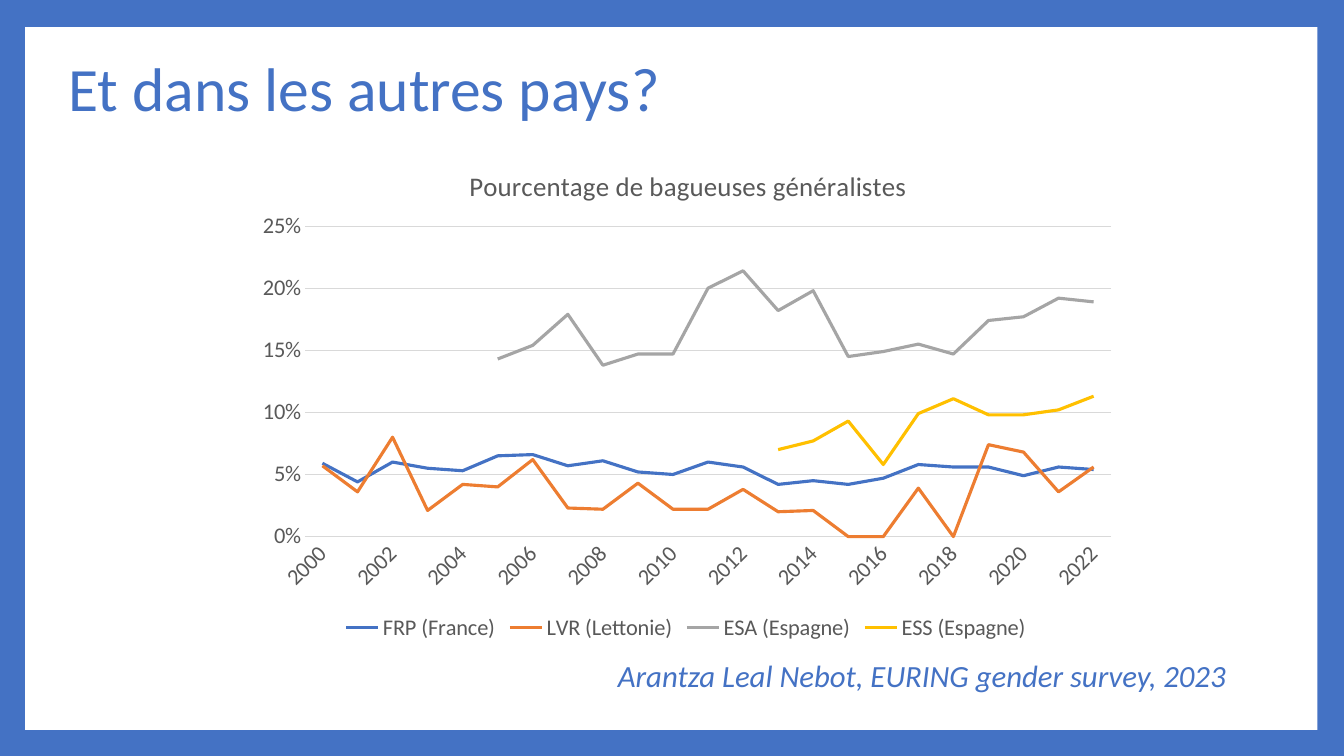
"""Build the slide comparing the share of women ringers across countries."""
from dataclasses import dataclass

import lxml.etree
import pptx
import pptx.chart.data
import pptx.dml.color
import pptx.enum.chart
import pptx.enum.shapes
import pptx.enum.text
import pptx.oxml
import pptx.oxml.ns
import pptx.util

Pt = pptx.util.Pt
qn = pptx.oxml.ns.qn


@dataclass(frozen=True)
class Theme:
    font: str = "Calibri"
    blue: str = "4472C4"
    white: str = "FFFFFF"
    label: str = "595959"
    grid: str = "D9D9D9"
    heading_size: float = 44
    credit_size: float = 22
    chart_title_size: float = 19.2
    label_size: float = 16
    series_width: float = 2.25
    grid_width: float = 0.75


THEME = Theme()
YEARS = range(2000, 2023)
COUNTRIES = [
    ("FRP (France)", "4472C4", 2000,
     [0.059, 0.044, 0.06, 0.055, 0.053, 0.065, 0.066, 0.057, 0.061, 0.052, 0.05, 0.06,
      0.056, 0.042, 0.045, 0.042, 0.047, 0.058, 0.056, 0.056, 0.049, 0.056, 0.054]),
    ("LVR (Lettonie)", "ED7D31", 2000,
     [0.057, 0.036, 0.08, 0.021, 0.042, 0.04, 0.062, 0.023, 0.022, 0.043, 0.022, 0.022,
      0.038, 0.02, 0.021, 0, 0, 0.039, 0, 0.074, 0.068, 0.036, 0.056]),
    ("ESA (Espagne)", "A5A5A5", 2005,
     [0.143, 0.154, 0.179, 0.138, 0.147, 0.147, 0.2, 0.214, 0.182, 0.198, 0.145, 0.149,
      0.155, 0.147, 0.174, 0.177, 0.192, 0.189]),
    ("ESS (Espagne)", "FFC000", 2013,
     [0.07, 0.077, 0.093, 0.058, 0.099, 0.111, 0.098, 0.098, 0.102, 0.113]),
]


def rgb(code):
    return pptx.dml.color.RGBColor.from_string(code)


def style_font(font, size, color, italic=False):
    font.name = THEME.font
    font.size = Pt(size)
    font.color.rgb = rgb(color)
    font.bold = False
    font.italic = italic


def style_line(line, color, width):
    line.color.rgb = rgb(color)
    line.width = Pt(width)


def add_text(slide, text, *, box, size, color, italic=False,
             anchor=pptx.enum.text.MSO_ANCHOR.TOP, inset=7.2):
    frame = slide.shapes.add_textbox(*map(Pt, box)).text_frame
    frame.word_wrap = True
    frame.vertical_anchor = anchor
    frame.margin_left = Pt(inset)
    paragraph = frame.paragraphs[0]
    paragraph.line_spacing = 0.9
    run = paragraph.add_run()
    run.text = text
    style_font(run.font, size, color, italic)


def add_panel(slide, box):
    panel = slide.shapes.add_shape(pptx.enum.shapes.MSO_SHAPE.RECTANGLE, *map(Pt, box))
    panel.shadow.inherit = False
    panel.fill.solid()
    panel.fill.fore_color.rgb = rgb(THEME.white)
    panel.line.fill.background()


def set_layout(parent, index, **settings):
    for previous in parent.findall(qn("c:layout")):
        parent.remove(previous)
    layout = lxml.etree.Element(qn("c:layout"))
    manual = lxml.etree.SubElement(layout, qn("c:manualLayout"))
    for tag, value in settings.items():
        lxml.etree.SubElement(manual, qn(f"c:{tag}")).set("val", str(value))
    parent.insert(index, layout)


def style_axes(chart):
    tick_none = pptx.enum.chart.XL_TICK_MARK.NONE
    years, share = chart.category_axis, chart.value_axis
    for axis in (years, share):
        axis.major_tick_mark = axis.minor_tick_mark = tick_none
        style_font(axis.tick_labels.font, THEME.label_size, THEME.label)
    style_line(years.format.line, THEME.grid, THEME.grid_width)
    years_xml = years._element
    years_xml.find(qn("c:txPr")).find(qn("a:bodyPr")).set("rot", "-2700000")
    skip = lxml.etree.Element(qn("c:tickLblSkip"))
    skip.set("val", "2")
    years_xml.find(qn("c:noMultiLvlLbl")).addprevious(skip)

    share.minimum_scale, share.maximum_scale, share.major_unit = 0, 0.25, 0.05
    share.tick_labels.number_format = "0%"
    share.tick_labels.number_format_is_linked = False
    share.format.line.fill.background()
    style_line(share.major_gridlines.format.line, THEME.grid, THEME.grid_width)


def add_share_chart(slide, title, box):
    shares = pptx.chart.data.CategoryChartData(number_format="0%")
    shares.categories = [str(year) for year in YEARS]
    for name, _, first_year, values in COUNTRIES:
        shares.add_series(name, [None] * (first_year - YEARS[0]) + values)
    chart = slide.shapes.add_chart(
        pptx.enum.chart.XL_CHART_TYPE.LINE, *map(Pt, box), shares).chart
    style_font(chart.font, THEME.label_size, THEME.label)

    chart.has_title = True
    heading = chart.chart_title.text_frame
    heading.text = title
    style_font(heading.paragraphs[0].runs[0].font, THEME.chart_title_size, THEME.label)
    set_layout(chart.chart_title._element, 1, xMode="edge", yMode="edge", x=0.25, y=0.05)
    set_layout(chart._chartSpace.chart.plotArea, 0, layoutTarget="inner",
               xMode="edge", yMode="edge", x=0.07, y=0.175, w=0.91, h=0.61)

    style_axes(chart)
    chart.has_legend = True
    chart.legend.position = pptx.enum.chart.XL_LEGEND_POSITION.BOTTOM
    chart.legend.include_in_layout = False
    style_font(chart.legend.font, THEME.label_size, THEME.label)
    for series, (_, color, _, _) in zip(chart.plots[0].series, COUNTRIES):
        series.smooth = False
        series.marker.style = pptx.enum.chart.XL_MARKER_STYLE.NONE
        style_line(series.format.line, color, THEME.series_width)


def main():
    deck = pptx.Presentation()
    deck.slide_width, deck.slide_height = Pt(960), Pt(540)
    slide = deck.slides.add_slide(deck.slide_layouts[6])
    slide.background.fill.solid()
    slide.background.fill.fore_color.rgb = rgb(THEME.blue)
    add_panel(slide, (18, 19.4, 923, 502))
    add_text(slide, "Et dans les autres pays?", box=(41.8, 12.2, 777.6, 106.6),
             size=THEME.heading_size, color=THEME.blue,
             anchor=pptx.enum.text.MSO_ANCHOR.MIDDLE)
    add_text(slide, "Arantza Leal Nebot, EURING gender survey, 2023",
             box=(430.6, 468.7, 529, 44), size=THEME.credit_size, color=THEME.blue,
             italic=True, inset=10.8)
    add_share_chart(slide, "Pourcentage de bagueuses généralistes",
                    (173.5, 97.9, 632.9, 363.6))
    deck.save("out.pptx")


if __name__ == "__main__":
    main()
